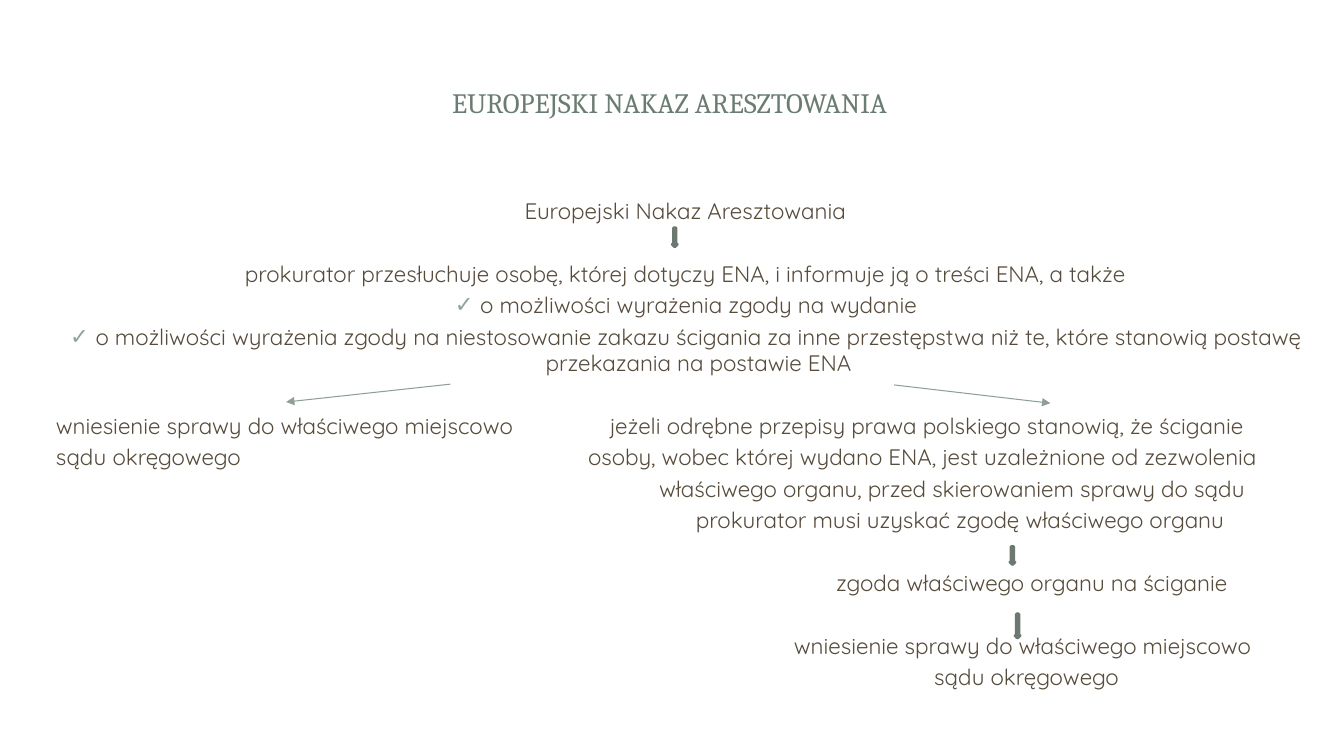
"""Build the slide on the European Arrest Warrant procedure."""
from lxml import etree
from pptx import Presentation, util as u
from pptx.dml.color import RGBColor
from pptx.enum import shapes, text
from pptx.oxml.ns import qn

THEME = {
    "title": "6B7D72", "body": "564B3C", "bullet": "93A299",
    "arrow_fill": "93A299", "arrow_line": "6D7871", "branch": "8F9F96",
    "title_font": "Cambria", "body_font": "Quicksand",
    "title_size": 20, "body_size": 16, "leading": 18.6, "gap": 3.8,
}
ROW = 0.79
BRANCH_TOP = 10.41

TITLE = ["EUROPEJSKI NAKAZ ARESZTOWANIA"]
WARRANT = ["Europejski Nakaz Aresztowania"]
HEARING = ["prokurator przesłuchuje osobę, której dotyczy ENA, i informuje ją o treści ENA, a także"]
CONSENTS = [
    "o możliwości wyrażenia zgody na wydanie",
    "o możliwości wyrażenia zgody na niestosowanie zakazu ścigania za inne przestępstwa "
    "niż te, które stanowią postawę przekazania na postawie ENA",
]
COURT = ["wniesienie sprawy do właściwego miejscowo", "sądu okręgowego"]
PERMISSION = [
    "jeżeli odrębne przepisy prawa polskiego stanowią, że ściganie",
    "osoby, wobec której wydano ENA, jest uzależnione od zezwolenia",
    "właściwego organu, przed skierowaniem sprawy do sądu",
    "prokurator musi uzyskać zgodę właściwego organu",
]
APPROVAL = ["zgoda właściwego organu na ściganie"]

MAIN_STEPS = [
    (WARRANT, 0, {"indents": [0.3]}),
    (HEARING, 2, {"indents": [0.3]}),
    (CONSENTS, 3, {"indents": [0.97, 0.97], "bullet": "✓"}),
]
BRANCH_STEPS = [
    (COURT, 1.41, 0, [0, 0]),
    (PERMISSION, 14.82, 0, [0.55, 0, 1.79, 2.72]),
    (APPROVAL, 21.07, 5, [0]),
    (COURT, 20.01, 7, [0, 3.53]),
]
BRANCH_WIDTHS = [12.5, 18, 11, 12.5]
DOWN_ARROWS = [(16.94, 5.74, 0.48), (25.45, 13.77, 0.46), (25.58, 15.47, 0.61)]
BRANCH_LINES = [(11.35, 9.68, 7.21, 10.13), (22.53, 9.7, 26.47, 10.16)]


def color(name):
    return RGBColor.from_string(THEME[name])


def add_bullet(paragraph, symbol):
    properties = paragraph._p.get_or_add_pPr()
    properties.set("indent", str(u.Cm(-0.64)))
    bullet_color = etree.SubElement(properties, qn("a:buClr"))
    etree.SubElement(bullet_color, qn("a:srgbClr"), val=THEME["bullet"])
    etree.SubElement(properties, qn("a:buFont"), typeface="Wingdings 2" if symbol == "P" else "Arial")
    etree.SubElement(properties, qn("a:buChar"), char=symbol)


def add_text(slide, lines, left, top, width, height, style="body", align=text.PP_ALIGN.LEFT,
             anchor=text.MSO_ANCHOR.TOP, indents=(0,), bullet=None):
    shape = slide.shapes.add_textbox(u.Cm(left), u.Cm(top), u.Cm(width), u.Cm(height))
    frame = shape.text_frame
    frame.word_wrap = True
    frame.vertical_anchor = anchor
    frame.margin_left = frame.margin_right = frame.margin_top = frame.margin_bottom = 0
    for index, (line, indent) in enumerate(zip(lines, indents)):
        paragraph = frame.paragraphs[0] if index == 0 else frame.add_paragraph()
        paragraph.alignment = align
        if style == "body":
            paragraph.line_spacing = u.Pt(THEME["leading"])
            paragraph.space_before = u.Pt(THEME["gap"] if index else 0)
        paragraph._p.get_or_add_pPr().set("marL", str(u.Cm(indent)))
        if bullet:
            add_bullet(paragraph, bullet)
        run = paragraph.add_run()
        run.text = line
        run.font.name = THEME[style + "_font"]
        run.font.size = u.Pt(THEME[style + "_size"])
        run.font.color.rgb = color(style)


def add_down_arrow(slide, left, top, height):
    arrow = slide.shapes.add_shape(shapes.MSO_SHAPE.DOWN_ARROW, u.Cm(left), u.Cm(top),
                                   u.Cm(0.13), u.Cm(height))
    arrow.shadow.inherit = False
    arrow.fill.solid()
    arrow.fill.fore_color.rgb = color("arrow_fill")
    arrow.line.color.rgb = color("arrow_line")
    arrow.line.width = u.Pt(2)


def add_branch_line(slide, *ends):
    connector = slide.shapes.add_connector(shapes.MSO_CONNECTOR.STRAIGHT, *map(u.Cm, ends))
    connector.line.color.rgb = color("branch")
    connector.line.width = u.Pt(0.75)
    etree.SubElement(connector.line._get_or_add_ln(), qn("a:tailEnd"), type="triangle")
    etree.SubElement(connector._element.spPr, qn("a:effectLst"))


def main():
    presentation = Presentation()
    presentation.slide_width, presentation.slide_height = u.Cm(33.87), u.Cm(19.05)
    slide = presentation.slides.add_slide(presentation.slide_layouts[6])
    add_text(slide, TITLE, 1.57, 1.14, 30.61, 2.9, style="title",
             align=text.PP_ALIGN.CENTER, anchor=text.MSO_ANCHOR.MIDDLE)
    for lines, row, options in MAIN_STEPS:
        add_text(slide, lines, 1.09, 5 + row * ROW, 32.06, len(lines) * ROW,
                 align=text.PP_ALIGN.CENTER, **options)
    for (lines, left, row, indents), width in zip(BRANCH_STEPS, BRANCH_WIDTHS):
        add_text(slide, lines, left, BRANCH_TOP + row * ROW, width, len(lines) * ROW,
                 indents=indents)
    for arrow in DOWN_ARROWS:
        add_down_arrow(slide, *arrow)
    for ends in BRANCH_LINES:
        add_branch_line(slide, *ends)
    presentation.save("out.pptx")


if __name__ == "__main__":
    main()
